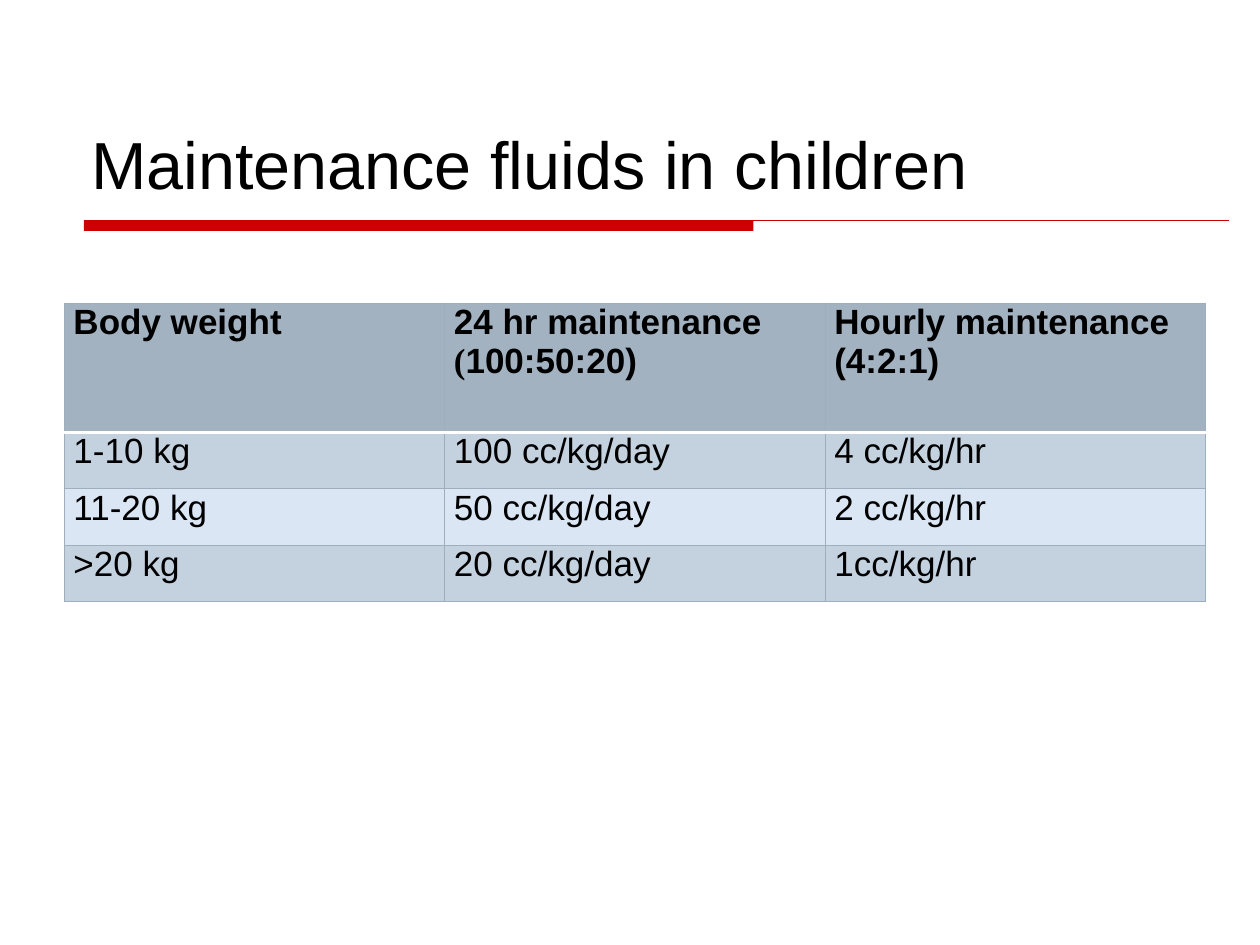
from lxml.etree import SubElement
from pptx import Presentation
from pptx.dml.color import RGBColor
from pptx.enum.shapes import MSO_CONNECTOR, MSO_SHAPE
from pptx.enum.text import MSO_ANCHOR
from pptx.oxml import parse_xml
from pptx.oxml.ns import nsdecls, qn
from pptx.util import Pt

TITLE = "Maintenance fluids in children"
ROWS = [
    ("Body weight", "24 hr maintenance\n(100:50:20)", "Hourly maintenance\n(4:2:1)"),
    ("1-10 kg", "100 cc/kg/day", "4 cc/kg/hr"),
    ("11-20 kg", "50 cc/kg/day", "2 cc/kg/hr"),
    (">20 kg", "20 cc/kg/day", "1cc/kg/hr"),
]

BLACK = RGBColor(0x00, 0x00, 0x00)
WHITE = RGBColor(0xFF, 0xFF, 0xFF)
RED = RGBColor(0xCC, 0x00, 0x00)
HEADER = RGBColor(0xA3, 0xB2, 0xC1)
BAND_DARK = RGBColor(0xC4, 0xD1, 0xDF)
BAND_LIGHT = RGBColor(0xDA, 0xE6, 0xF3)
GRID = RGBColor(0x9F, 0xAE, 0xBD)

RULE_LEFT, RULE_TOP, RULE_RIGHT = 48, 126, 702
BAR_WIDTH, BAR_HEIGHT = 382.5, 6
TABLE_LEFT, TABLE_TOP = 36.8, 173.2
COLUMN_WIDTH, HEADER_HEIGHT, ROW_HEIGHT = 217.4, 73.8, 32.3


def style(font, size, bold=False):
    font.name = "Arial"
    font.size = Pt(size)
    font.bold = bold
    font.color.rgb = BLACK


def set_borders(cell, borders):
    properties = cell._tc.get_or_add_tcPr()
    for position, (side, (color, width)) in enumerate(borders.items()):
        properties.insert(position, parse_xml(
            f'<a:ln{side} {nsdecls("a")} w="{Pt(width)}"><a:solidFill>'
            f'<a:srgbClr val="{color}"/></a:solidFill></a:ln{side}>'))


def add_title(slide):
    title = slide.shapes.add_textbox(Pt(45), Pt(24), Pt(630), Pt(119.5 - 24))
    frame = title.text_frame
    frame.word_wrap = True
    frame.vertical_anchor = MSO_ANCHOR.BOTTOM
    frame.text = TITLE
    style(frame.paragraphs[0].runs[0].font, 38)


def add_rule(slide):
    bar = slide.shapes.add_shape(MSO_SHAPE.RECTANGLE, Pt(RULE_LEFT), Pt(RULE_TOP),
                                 Pt(BAR_WIDTH), Pt(BAR_HEIGHT))
    bar.shadow.inherit = False
    bar.fill.solid()
    bar.fill.fore_color.rgb = RED
    bar.line.fill.background()
    rule = slide.shapes.add_connector(MSO_CONNECTOR.STRAIGHT, Pt(RULE_LEFT), Pt(RULE_TOP),
                                      Pt(RULE_RIGHT), Pt(RULE_TOP))
    rule.line.color.rgb = RED
    rule.line.width = Pt(0.75)
    SubElement(rule._element.spPr, qn("a:effectLst"))


def fill_cell(cell, text, row):
    thin, divider = (GRID, 0.75), (WHITE, 2)
    set_borders(cell, {"L": thin, "R": thin,
                       "T": divider if row == 1 else thin,
                       "B": divider if row == 0 else thin})
    cell.fill.solid()
    cell.fill.fore_color.rgb = HEADER if row == 0 else BAND_DARK if row % 2 else BAND_LIGHT
    cell.margin_left = cell.margin_right = Pt(5.2)
    cell.margin_top = cell.margin_bottom = 0
    cell.text_frame.text = text
    for paragraph in cell.text_frame.paragraphs:
        for run in paragraph.runs:
            style(run.font, 20, bold=row == 0)


def add_fluid_table(slide):
    columns = len(ROWS[0])
    heights = [HEADER_HEIGHT] + [ROW_HEIGHT] * (len(ROWS) - 1)
    table = slide.shapes.add_table(len(ROWS), columns, Pt(TABLE_LEFT), Pt(TABLE_TOP),
                                   Pt(COLUMN_WIDTH * columns), Pt(sum(heights))).table
    for column in table.columns:
        column.width = Pt(COLUMN_WIDTH)
    for row, (texts, height) in enumerate(zip(ROWS, heights)):
        table.rows[row].height = Pt(height)
        for column, text in enumerate(texts):
            fill_cell(table.cell(row, column), text, row)

    ratio = table.cell(0, 1).text_frame.paragraphs[1]
    bracket = ratio.runs[0]
    digits = ratio.add_run()
    bracket.text, digits.text = bracket.text[:1], bracket.text[1:]
    style(digits.font, 20, bold=True)
    bracket.font.name = "Times New Roman"


def main():
    deck = Presentation()
    deck.slide_width, deck.slide_height = Pt(720), Pt(540)
    slide = deck.slides.add_slide(deck.slide_layouts[6])
    add_rule(slide)
    add_title(slide)
    add_fluid_table(slide)
    deck.save("out.pptx")


if __name__ == "__main__":
    main()
